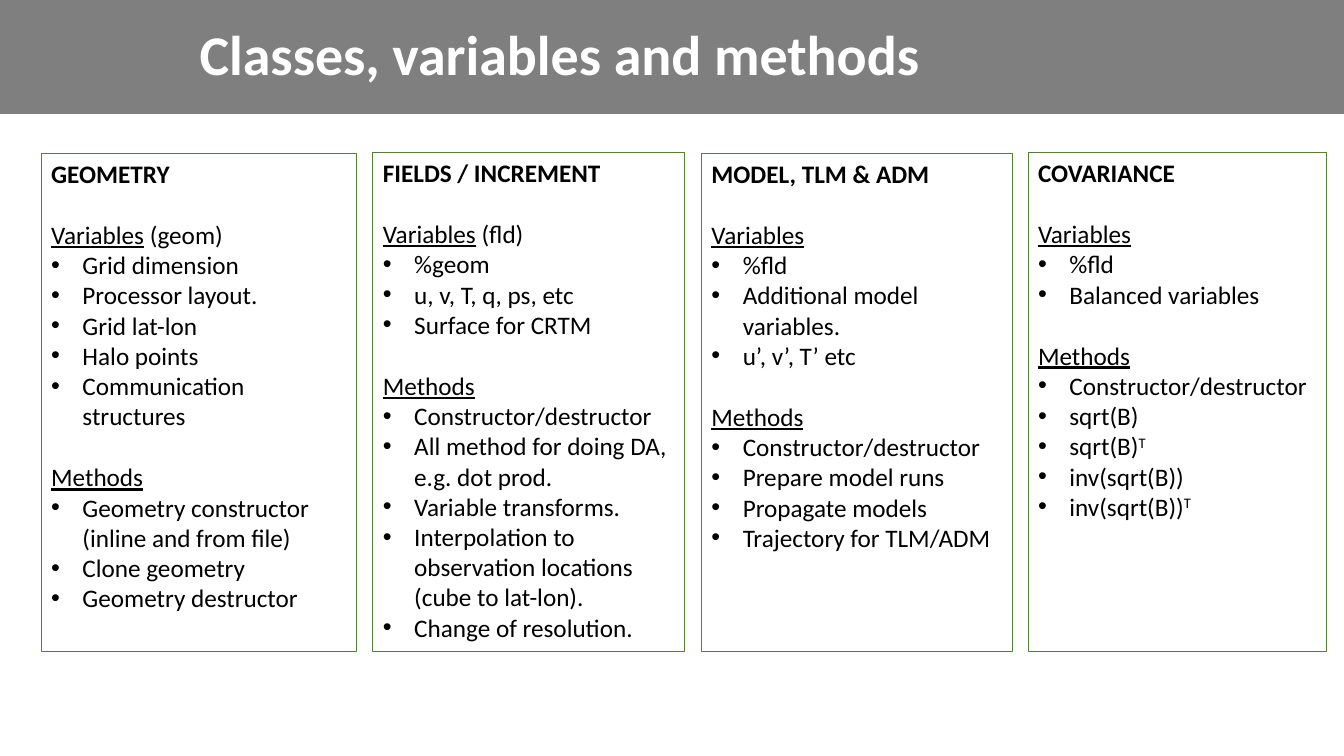
from lxml import etree
from pptx import Presentation
from pptx import util as u
from pptx.dml.color import RGBColor
from pptx.enum import shapes, text
from pptx.oxml import ns

BLACK = RGBColor(0x00, 0x00, 0x00)
WHITE = RGBColor(0xFF, 0xFF, 0xFF)
GREEN = RGBColor(0x54, 0x82, 0x35)

BODY = {"name": "Calibri", "size": u.Pt(18), "bold": False}
HEADING = {**BODY, "bold": True}
SECTION = {**BODY, "underline": True}
TITLE = {"name": "Calibri", "size": u.Pt(40), "bold": True}
FRAME = {"word_wrap": True, "auto_size": text.MSO_AUTO_SIZE.NONE}

LINE_GAP = u.Pt(22)
BULLET_INDENT = u.Cm(0.79)

# Each class: box (left, top, width, height in cm), heading, sections;
# "^" marks the start of a superscript
CLASSES = [
    ((1.04, 3.86, 7.95, 12.57), "GEOMETRY", {
        "Variables (geom)": ["Grid dimension", "Processor layout.", "Grid lat-lon",
                             "Halo points", "Communication structures"],
        "Methods": ["Geometry constructor (inline and from file)",
                    "Clone geometry", "Geometry destructor"]}),
    ((9.4, 3.84, 7.85, 12.57), "FIELDS / INCREMENT", {
        "Variables (fld)": ["%geom", "u, v, T, q, ps, etc", "Surface for CRTM"],
        "Methods": ["Constructor/destructor", "All method for doing DA, e.g. dot prod.",
                    "Variable transforms.",
                    "Interpolation to observation locations (cube to lat-lon).",
                    "Change of resolution."]}),
    ((17.68, 3.86, 7.85, 12.57), "MODEL, TLM & ADM", {
        "Variables": ["%fld", "Additional model variables.", "u’, v’, T’ etc"],
        "Methods": ["Constructor/destructor", "Prepare model runs",
                    "Propagate models", "Trajectory for TLM/ADM"]}),
    ((25.91, 3.84, 7.52, 12.57), "COVARIANCE", {
        "Variables": ["%fld", "Balanced variables"],
        "Methods": ["Constructor/destructor", "sqrt(B)", "sqrt(B)^T",
                    "inv(sqrt(B))", "inv(sqrt(B))^T"]}),
]


def set_attributes(target, values):
    for name, value in values.items():
        setattr(target, name, value)


def add_run(paragraph, words, font_values, color=BLACK):
    run = paragraph.add_run()
    run.text = words
    set_attributes(run.font, font_values)
    run.font.color.rgb = color
    return run


def add_paragraph(frame, space_before=0):
    paragraph = frame.add_paragraph()
    set_attributes(paragraph, {"alignment": text.PP_ALIGN.LEFT,
                               "space_before": space_before})
    return paragraph


def add_bullet(paragraph):
    properties = paragraph._p.get_or_add_pPr()
    properties.set("marL", str(BULLET_INDENT))
    properties.set("indent", str(-BULLET_INDENT))
    etree.SubElement(properties, ns.qn("a:buFont"), typeface="Arial")
    etree.SubElement(properties, ns.qn("a:buChar"), char="•")


def build_header(slide, left, top, width, height):
    # Half-transparent band behind the title
    band = slide.shapes.add_shape(shapes.MSO_SHAPE.RECTANGLE, u.Cm(left), u.Cm(top),
                                  u.Cm(width), u.Cm(height))
    band.shadow.inherit = False
    band.fill.solid()
    band.fill.fore_color.rgb = BLACK
    band.line.fill.background()
    color = band._element.spPr.find(".//" + ns.qn("a:srgbClr"))
    etree.SubElement(color, ns.qn("a:alpha"), val="50000")
    slide.shapes._spTree.insert(2, band._element)

    # Title
    title = slide.shapes.title
    set_attributes(title, {"left": u.Cm(left + 0.56), "top": u.Cm(top + 0.3),
                           "width": u.Cm(27.08), "height": u.Cm(2.31)})
    set_attributes(title.text_frame, {**FRAME, "vertical_anchor": text.MSO_ANCHOR.MIDDLE})
    paragraph = title.text_frame.paragraphs[0]
    set_attributes(paragraph, {"alignment": text.PP_ALIGN.CENTER, "line_spacing": 0.9})
    add_run(paragraph, "Classes, variables and methods", TITLE, WHITE)


def build_class_box(slide, box, heading, sections):
    # Outlined box
    shape = slide.shapes.add_shape(shapes.MSO_SHAPE.RECTANGLE, *map(u.Cm, box))
    shape.shadow.inherit = False
    shape.fill.background()
    shape.line.color.rgb = GREEN
    shape.line.width = u.Pt(0.75)

    # Heading
    frame = shape.text_frame
    set_attributes(frame, {**FRAME, "vertical_anchor": text.MSO_ANCHOR.TOP})
    frame.paragraphs[0].alignment = text.PP_ALIGN.LEFT
    add_run(frame.paragraphs[0], heading, HEADING)

    # Sections with bulleted members
    for section, members in sections.items():
        label, space, suffix = section.partition(" ")
        paragraph = add_paragraph(frame, LINE_GAP)
        add_run(paragraph, label, SECTION)
        if suffix:
            add_run(paragraph, space + suffix, BODY)
        for member in members:
            base, _, superscript = member.partition("^")
            paragraph = add_paragraph(frame)
            add_bullet(paragraph)
            add_run(paragraph, base, BODY)
            if superscript:
                run = add_run(paragraph, superscript, BODY)
                run.font._element.set("baseline", "30000")


def main():
    presentation = Presentation()
    presentation.slide_width = u.Cm(33.87)
    presentation.slide_height = u.Cm(19.05)
    slide = presentation.slides.add_slide(presentation.slide_layouts[5])
    build_header(slide, 0, 0, 33.87, 2.87)
    for box, heading, sections in CLASSES:
        build_class_box(slide, box, heading, sections)
    presentation.save("out.pptx")


if __name__ == "__main__":
    main()
